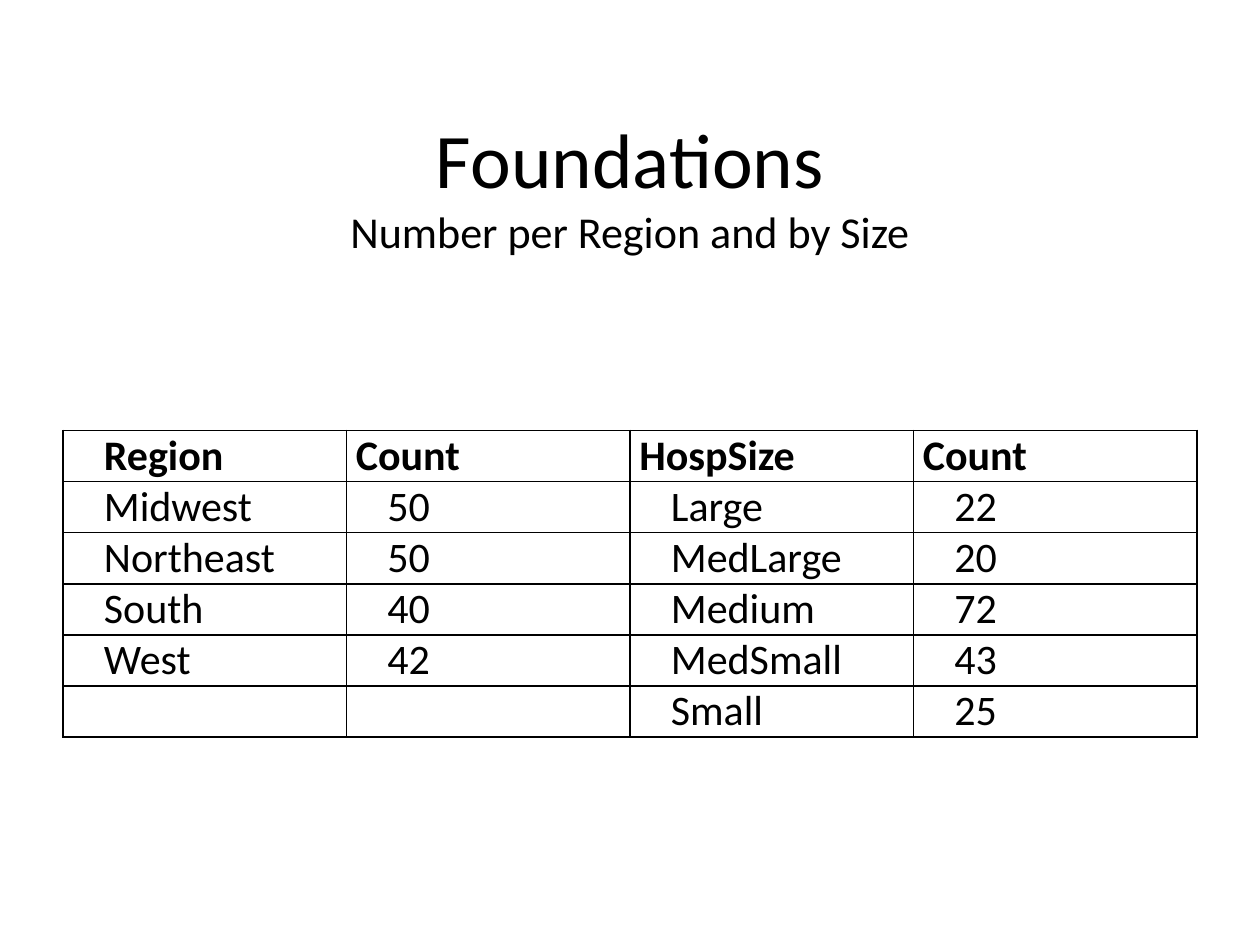
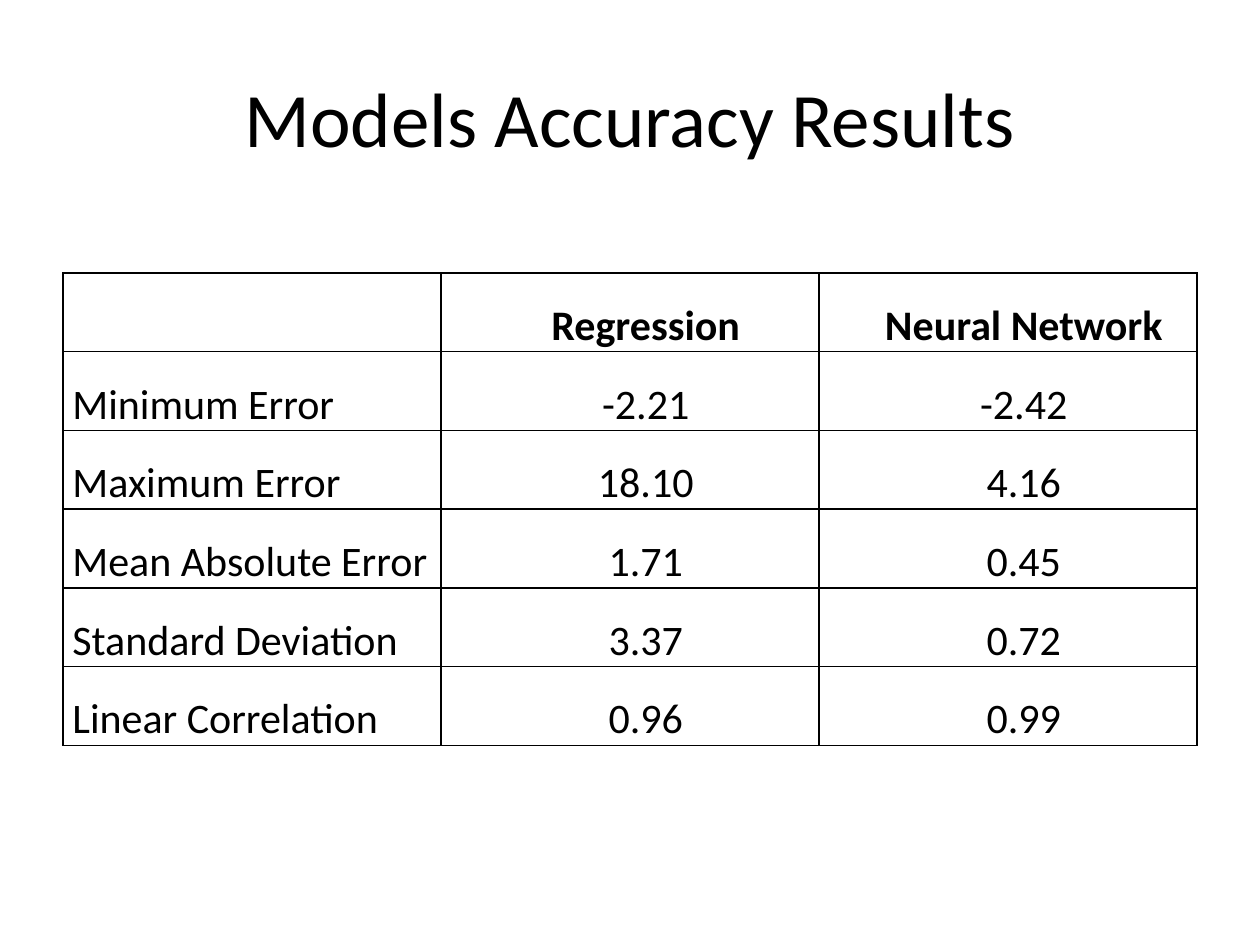
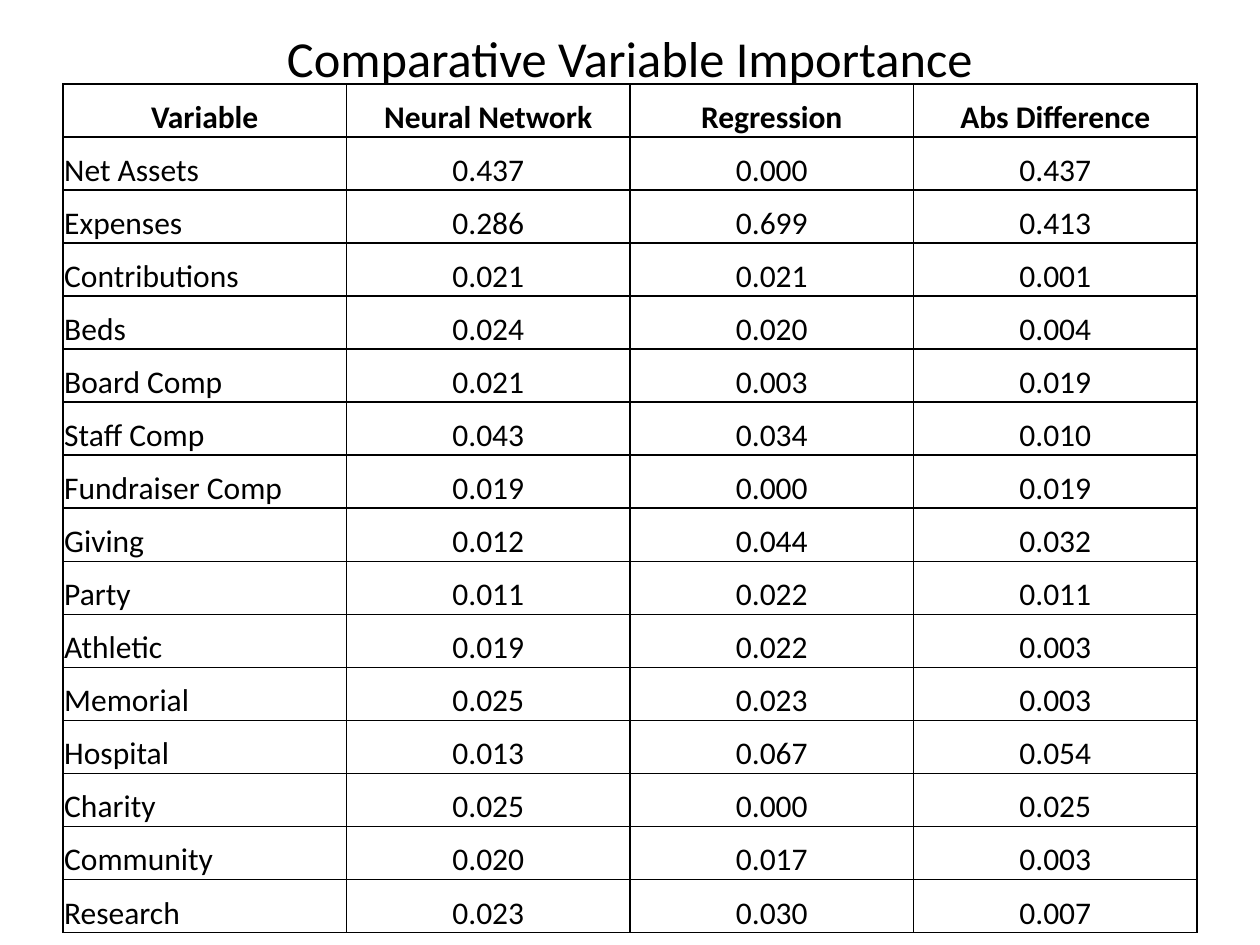
from lxml.etree import SubElement
from pptx import Presentation
from pptx.dml.color import RGBColor
from pptx.enum.text import MSO_ANCHOR, PP_ALIGN
from pptx.oxml.ns import qn
from pptx.util import Pt

COLORS = {"ink": "000000", "paper": "FFFFFF"}
FONT = "Calibri"
LEFT, WIDTH = 36, 648
INDENT = 18
MID, JUST, START = PP_ALIGN.CENTER, PP_ALIGN.JUSTIFY, PP_ALIGN.LEFT

COUNTS = [
    ("Region", "Count", "HospSize", "Count"),
    ("Midwest", "50", "Large", "22"),
    ("Northeast", "50", "MedLarge", "20"),
    ("South", "40", "Medium", "72"),
    ("West", "42", "MedSmall", "43"),
    ("", "", "Small", "25"),
]
ERRORS = [
    ("", "Regression", "Neural Network"),
    ("Minimum Error", "-2.21", "-2.42"),
    ("Maximum Error", "18.10", "4.16"),
    ("Mean Absolute Error", "1.71", "0.45"),
    ("Standard Deviation", "3.37", "0.72"),
    ("Linear Correlation", "0.96", "0.99"),
]
WEIGHTS = [
    ("Variable", "Neural Network", "Regression", "Abs Difference"),
    ("Net Assets", "0.437", "0.000", "0.437"),
    ("Expenses", "0.286", "0.699", "0.413"),
    ("Contributions", "0.021", "0.021", "0.001"),
    ("Beds", "0.024", "0.020", "0.004"),
    ("Board Comp", "0.021", "0.003", "0.019"),
    ("Staff Comp", "0.043", "0.034", "0.010"),
    ("Fundraiser Comp", "0.019", "0.000", "0.019"),
    ("Giving", "0.012", "0.044", "0.032"),
    ("Party", "0.011", "0.022", "0.011"),
    ("Athletic", "0.019", "0.022", "0.003"),
    ("Memorial", "0.025", "0.023", "0.003"),
    ("Hospital", "0.013", "0.067", "0.054"),
    ("Charity", "0.025", "0.000", "0.025"),
    ("Community", "0.020", "0.017", "0.003"),
    ("Research", "0.023", "0.030", "0.007"),
]


def color(name):
    return RGBColor.from_string(COLORS[name])


def style(run, size, bold=False):
    font = run.font
    font.name, font.size, font.bold = FONT, Pt(size), bold
    font.color.rgb = color("ink")


def add_title(slide, top, height, text, sizes, foot=3.6):
    """Centre the title in its box; sizes holds one size per line."""
    box = slide.shapes.add_textbox(Pt(LEFT), Pt(top), Pt(WIDTH), Pt(height))
    frame = box.text_frame
    frame.word_wrap = True
    frame.vertical_anchor = MSO_ANCHOR.MIDDLE
    frame.margin_bottom = Pt(foot)
    para = frame.paragraphs[0]
    para.text = text
    para.alignment = MID
    for run, size in zip(para.runs, sizes):
        style(run, size)


def add_edges(cell):
    props = cell._tc.get_or_add_tcPr()
    for n, side in enumerate(("lnL", "lnR", "lnT", "lnB")):
        line = props.makeelement(qn("a:" + side), {"w": str(Pt(1))})
        fill = SubElement(line, qn("a:solidFill"))
        SubElement(fill, qn("a:srgbClr"), val=COLORS["ink"])
        props.insert(n, line)


def add_grid(slide, top, height, rows, size, pads, look):
    """Draw rows as a table; look(row, col) gives alignment and first indent."""
    shape = slide.shapes.add_table(len(rows), len(rows[0]), Pt(LEFT), Pt(top),
                                   Pt(WIDTH), Pt(height))
    table = shape.table
    table.first_row = table.horz_banding = False
    for row in table.rows:
        row.height = Pt(round(height / len(rows), 2))
    for r, texts in enumerate(rows):
        for c, text in enumerate(texts):
            cell = table.cell(r, c)
            cell.fill.solid()
            cell.fill.fore_color.rgb = color("paper")
            add_edges(cell)
            cell.vertical_anchor = MSO_ANCHOR.BOTTOM
            side, head = pads
            cell.margin_left = cell.margin_right = Pt(side)
            cell.margin_top, cell.margin_bottom = Pt(head), Pt(0)
            para = cell.text_frame.paragraphs[0]
            para.text = text
            para.alignment, indent = look(r, c)
            if indent:
                para._p.get_or_add_pPr().set("indent", str(Pt(indent)))
            for run in para.runs:
                style(run, size, bold=r == 0)


def count_look(row, col):
    return JUST, 0 if row == 0 and col else INDENT


def error_look(row, col):
    return (MID, INDENT) if col else (START, 0)


def weight_look(row, col):
    return (JUST if row and not col else MID), 0


def main():
    deck = Presentation()
    deck.slide_width, deck.slide_height = Pt(720), Pt(540)
    first, second, third = (deck.slides.add_slide(deck.slide_layouts[6])
                            for _ in range(3))

    add_title(first, 66, 120, "Foundations\vNumber per Region and by Size",
              (44.1, 25.2), foot=45)
    add_grid(first, 246, 175.2, COUNTS, 24, (5.4, 0), count_look)

    add_title(second, 21.6, 90, "Models Accuracy Results", (44,))
    add_grid(second, 156, 270, ERRORS, 24, (5.4, 0), error_look)

    add_title(third, 12, 42, "Comparative Variable Importance", (28.8,))
    add_grid(third, 48, 485.28, WEIGHTS, 18, (0.72, 0.72), weight_look)

    deck.save("out.pptx")


if __name__ == "__main__":
    main()
